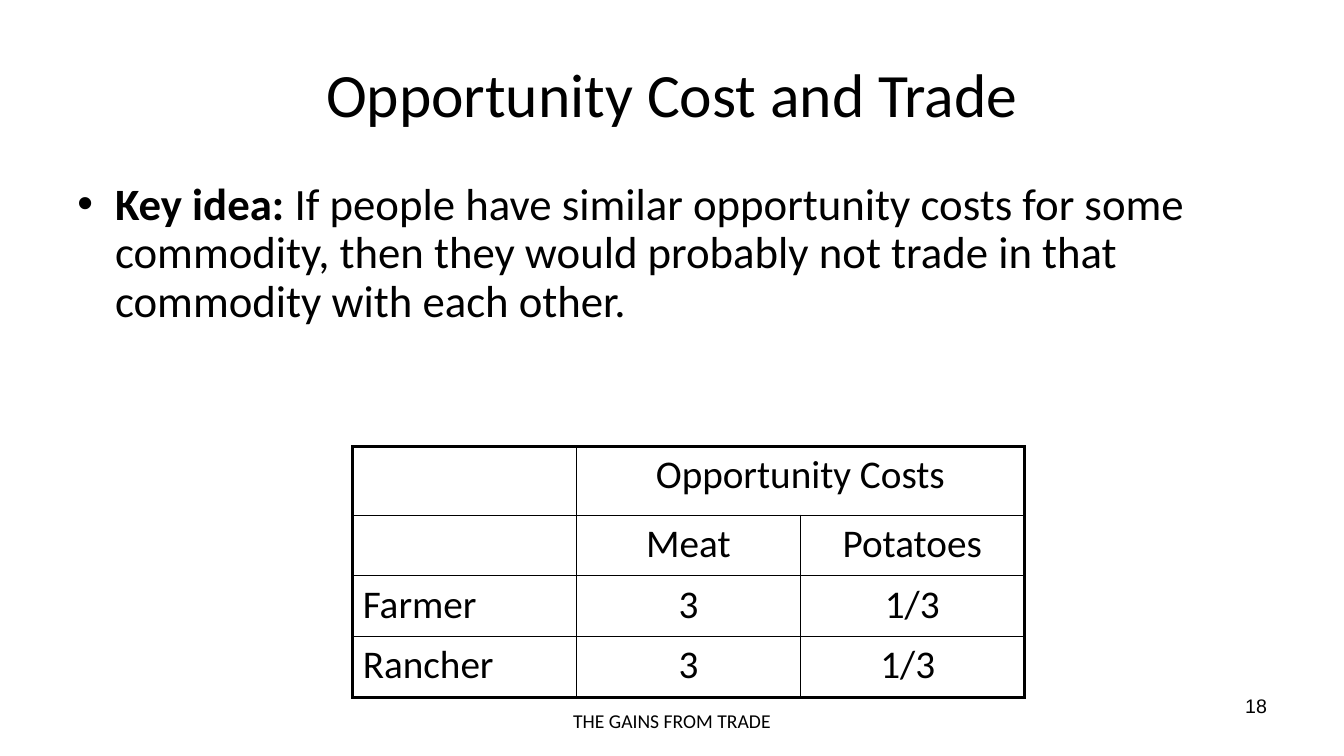
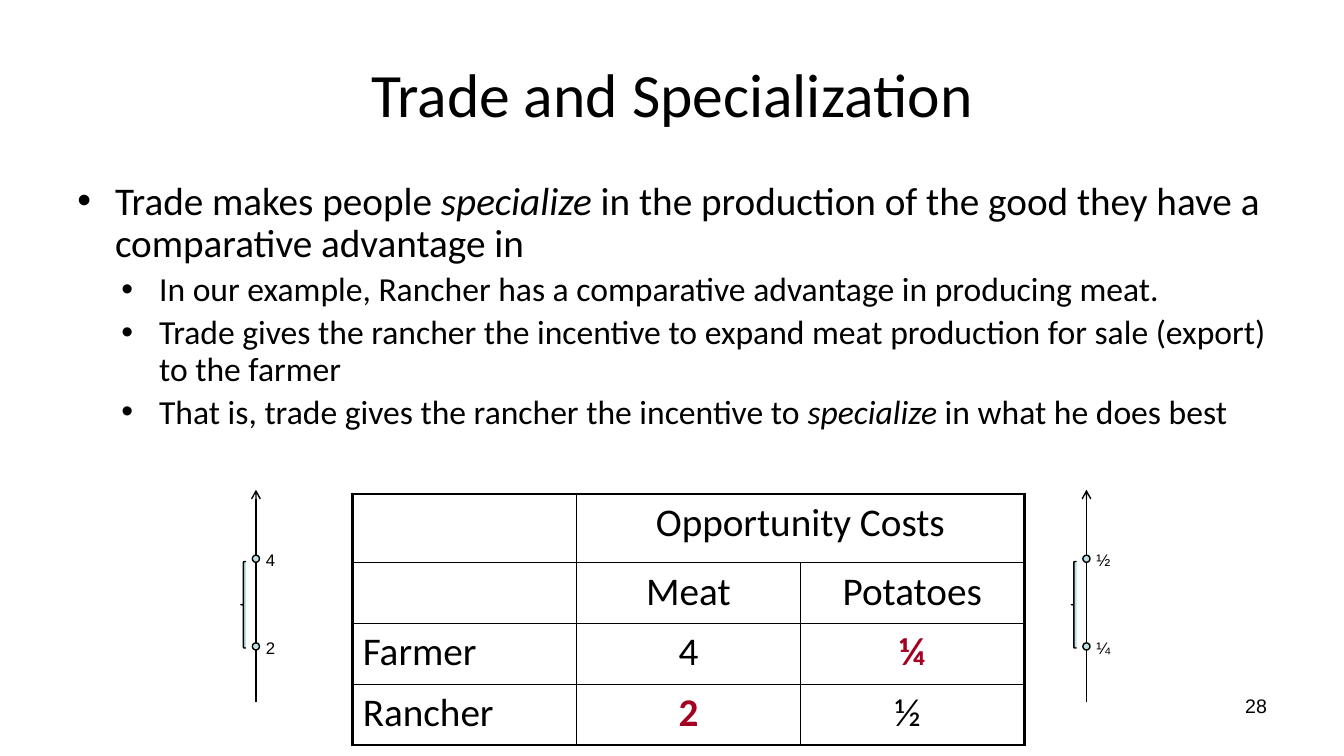
from lxml import etree
from pptx import Presentation
from pptx import util as u
from pptx.dml.color import RGBColor
from pptx.enum import shapes, text
from pptx.oxml import ns

BLACK = RGBColor(0x00, 0x00, 0x00)
RED = RGBColor(0xA5, 0x00, 0x21)
PALE_TEAL = RGBColor(0xBB, 0xE0, 0xE3)
HEADING_FONT, LABEL_FONT = "Calibri", "Arial"
LEFT, CENTER, RIGHT = text.PP_ALIGN.LEFT, text.PP_ALIGN.CENTER, text.PP_ALIGN.RIGHT
ITALIC, BOLD = {"italic": True}, {"bold": True}
WINNER = {"bold": True, "color": RED}


def element(parent, tag, **attributes):
    """Append a drawing element with the given attributes and return it."""
    return etree.SubElement(parent, ns.qn(tag), attributes)


def write(paragraph, words, size=28, font=HEADING_FONT, color=BLACK, bold=False, italic=False):
    """Add one formatted span of text to a paragraph."""
    span = paragraph.add_run()
    span.text = words
    span.font.size = u.Pt(size)
    span.font.name = font
    span.font.color.rgb = color
    span.font.bold = bold
    span.font.italic = italic


class Deck:
    """Hold the shared style and the slide being built."""

    def __init__(self):
        self.file = Presentation()
        self.file.slide_width, self.file.slide_height = u.Cm(33.87), u.Cm(19.05)
        self.page = None

    def add_page(self, title, number):
        """Start a slide with its title and page number."""
        self.page = self.file.slides.add_slide(self.file.slide_layouts[5])
        box = self.page.shapes.title
        box.left, box.top, box.width, box.height = u.Cm(1.7), u.Cm(0.76), u.Cm(30.48), u.Cm(3.18)
        box.text_frame.vertical_anchor = text.MSO_ANCHOR.MIDDLE
        paragraph = box.text_frame.paragraphs[0]
        paragraph.alignment = CENTER
        write(paragraph, title, size=44)
        self.add_label(number, 27.94, 17.35, 4.24, 1.32, align=RIGHT, size=14, font=LABEL_FONT)

    def add_box(self, left, top, width, height):
        """Add an empty wrapping text box and return its frame."""
        box = self.page.shapes.add_textbox(u.Cm(left), u.Cm(top), u.Cm(width), u.Cm(height))
        box.text_frame.word_wrap = True
        return box.text_frame

    def add_label(self, words, left, top, width, height, align=LEFT, **style):
        """Add a single line of text."""
        paragraph = self.add_box(left, top, width, height).paragraphs[0]
        paragraph.alignment = align
        write(paragraph, words, **style)

    def add_bullets(self, items):
        """Add a bulleted list from (indent, size, spans) items."""
        frame = self.add_box(1.7, 4.45, 30.48, 12.57)
        for index, (indent, size, spans) in enumerate(items):
            paragraph = frame.add_paragraph() if index else frame.paragraphs[0]
            properties = paragraph._p.get_or_add_pPr()
            properties.set("marL", str(u.Cm(indent)))
            properties.set("indent", str(u.Cm(-0.95)))
            element(properties, "a:buFont", typeface=LABEL_FONT)
            element(properties, "a:buChar", char="•")
            paragraph.line_spacing = 0.9
            paragraph.space_before = u.Pt(0.2 * size if index else 0)
            for words, style in spans:
                write(paragraph, words, size=size, **style)

    def add_cost_table(self, top, farmer, rancher):
        """Add the opportunity cost table with its two data rows."""
        rows = [
            [("", {}), ("Opportunity Costs", {}), ("", {})],
            [("", {}), ("Meat", {}), ("Potatoes", {})],
            [("Farmer", {}), *farmer],
            [("Rancher", {}), *rancher],
        ]
        heights = [1.73, 1.53, 1.53, 1.53]
        table = self.page.shapes.add_table(
            4, 3, u.Cm(8.89), u.Cm(top), u.Cm(16.92), u.Cm(sum(heights))).table
        table.first_row = table.horz_banding = False
        for column in table.columns:
            column.width = u.Cm(5.64)
        table.cell(0, 1).merge(table.cell(0, 2))
        for y, (row, height) in enumerate(zip(rows, heights)):
            table.rows[y].height = u.Cm(height)
            for x, (words, style) in enumerate(row):
                cell = table.cell(y, x)
                cell.fill.background()
                last = x + (cell.span_width if cell.is_merge_origin else 1) == 3
                self.add_borders(cell, lnL=x == 0, lnR=last, lnT=y == 0, lnB=y == 3)
                if words:
                    paragraph = cell.text_frame.paragraphs[0]
                    paragraph.alignment = CENTER if x else LEFT
                    write(paragraph, words, **style)

    def add_borders(self, cell, **sides):
        """Draw cell borders, thick on the sides marked as outer."""
        properties = cell._tc.get_or_add_tcPr()
        for index, (side, outer) in enumerate(sides.items()):
            line = element(properties, f"a:{side}", w=str(u.Pt(2.25 if outer else 1)))
            element(element(line, "a:solidFill"), "a:srgbClr", val=str(BLACK))
            properties.insert(index, line)

    def add_shape(self, kind, left, top, width, height):
        """Add a pale shape with a thin black outline."""
        shape = self.page.shapes.add_shape(kind, u.Cm(left), u.Cm(top), u.Cm(width), u.Cm(height))
        shape.shadow.inherit = False
        shape.fill.solid()
        shape.fill.fore_color.rgb = PALE_TEAL
        shape.line.color.rgb = BLACK
        shape.line.width = u.Pt(1)
        return shape

    def add_price_axis(self, x, high, low):
        """Add an upward axis with a braced range between two marked values."""
        axis = self.page.shapes.add_connector(
            shapes.MSO_CONNECTOR.STRAIGHT, u.Cm(x), u.Cm(17.7), u.Cm(x), u.Cm(12.34))
        axis.line.color.rgb = BLACK
        axis.line.width = u.Pt(1)
        element(axis.line._get_or_add_ln(), "a:tailEnd", type="arrow")
        element(axis._element.spPr, "a:effectLst")
        for words, y in ((high, 14.08), (low, 16.29)):
            self.add_shape(shapes.MSO_SHAPE.OVAL, x - 0.09, y - 0.09, 0.18, 0.18)
            self.add_label(words, x, y - 0.35, 1.2, 0.76, size=12, font=LABEL_FONT)
        brace = self.add_shape(shapes.MSO_SHAPE.LEFT_BRACE, x - 0.38, 14.15, 0.13, 2.18)
        brace.adjustments[0] = 0.08


def main():
    """Build both slides and save the deck."""
    deck = Deck()

    deck.add_page("Opportunity Cost and Trade", "18")
    deck.add_bullets([(0.95, 32, [
        ("Key idea: ", BOLD),
        ("If people have similar opportunity costs for some commodity, then they would "
         "probably not trade in that commodity with each other.", {}),
    ])])
    deck.add_cost_table(11.25, [("3", {}), ("1/3", {})], [("3", {}), ("1/3 ", {})])
    deck.add_label("THE GAINS FROM TRADE", 13, 17.73, 7.87, 0.94, align=CENTER, size=14)

    deck.add_page("Trade and Specialization", "28")
    deck.add_bullets([
        (0.95, 28, [
            ("Trade makes people ", {}), ("specialize", ITALIC),
            (" in the production of the good they have a comparative advantage in", {})]),
        (2.06, 24, [
            ("In our example, Rancher has a comparative advantage in producing meat.", {})]),
        (2.06, 24, [
            ("Trade gives the rancher the incentive to expand meat production for sale "
             "(export) to the farmer", {})]),
        (2.06, 24, [
            ("That is, trade gives the rancher the incentive to ", {}), ("specialize", ITALIC),
            (" in what he does best", {})]),
    ])
    deck.add_cost_table(12.45, [("4", {}), ("¼", WINNER)], [("2", WINNER), ("½ ", {})])
    deck.add_price_axis(6.45, "4", "2")
    deck.add_price_axis(27.38, "½", "¼")

    deck.file.save("out.pptx")


if __name__ == "__main__":
    main()
